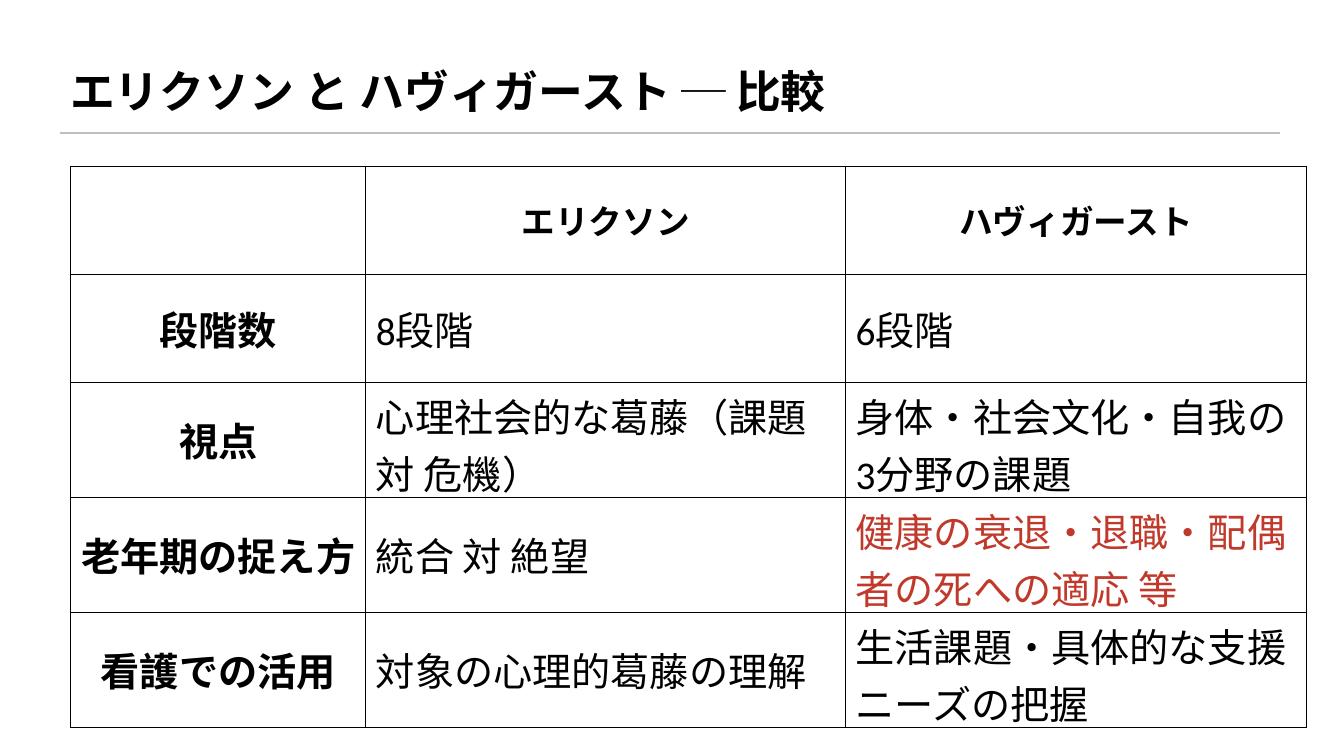
import pptx
import pptx.dml.color
import pptx.enum.shapes
import pptx.enum.text
import pptx.oxml
import pptx.oxml.ns
import pptx.util
from lxml import etree

Cm = pptx.util.Cm
Pt = pptx.util.Pt
RGBColor = pptx.dml.color.RGBColor
ALIGN = pptx.enum.text.PP_ALIGN
MIDDLE = pptx.enum.text.MSO_ANCHOR.MIDDLE
qn = pptx.oxml.ns.qn

BLACK = RGBColor(0x00, 0x00, 0x00)
GREY = RGBColor(0xBF, 0xBF, 0xBF)
RED = RGBColor(0xC0, 0x39, 0x2B)

TITLE = dict(name="Noto Sans CJK JP", size=Pt(32), bold=True)
HEADER = dict(size=Pt(24), bold=True)
LABEL = dict(bold=True)

ROWS = [
    ["", "エリクソン", "ハヴィガースト"],
    ["段階数", "8段階", "6段階"],
    ["視点", "心理社会的な葛藤（課題 対 危機）", "身体・社会文化・自我の3分野の課題"],
    ["老年期の捉え方", "統合 対 絶望", "健康の衰退・退職・配偶者の死への適応 等"],
    ["看護での活用", "対象の心理的葛藤の理解", "生活課題・具体的な支援ニーズの把握"],
]
HIGHLIGHT = (3, 2)
COL_WIDTHS = [7.44, 12.09, 11.61]
ROW_HEIGHTS = [2.72, 2.72, 2.9, 2.9, 2.9]


class SlideBuilder:
    base = dict(name="Calibri", size=Pt(28), bold=False)

    def __init__(self, slide):
        self.s = slide

    def add_text(self, tf, text, fmt, color=BLACK, align=ALIGN.LEFT):
        p = tf.paragraphs[0]
        p.alignment = align
        r = p.add_run()
        r.text = text
        for key, value in {**self.base, **fmt}.items():
            setattr(r.font, key, value)
        r.font.color.rgb = color

    def textbox(self, x, y, w, h, text, fmt):
        tf = self.s.shapes.add_textbox(Cm(x), Cm(y), Cm(w), Cm(h)).text_frame
        tf.word_wrap = True
        tf.vertical_anchor = MIDDLE
        self.add_text(tf, text, fmt)

    def line(self, x1, y1, x2, y2, color, width):
        sp = self.s.shapes.add_connector(
            pptx.enum.shapes.MSO_CONNECTOR.STRAIGHT, Cm(x1), Cm(y1), Cm(x2), Cm(y2))
        sp.line.color.rgb = color
        sp.line.width = Pt(width)
        etree.SubElement(sp._element.spPr, qn("a:effectLst"))

    def borders(self, cell, color, width):
        tcPr = cell._tc.get_or_add_tcPr()
        for i, side in enumerate(("lnL", "lnR", "lnT", "lnB")):
            ln = etree.Element(qn("a:" + side), w=str(Pt(width)))
            fill = etree.SubElement(ln, qn("a:solidFill"))
            etree.SubElement(fill, qn("a:srgbClr"), val=str(color))
            tcPr.insert(i, ln)

    def table(self, x, y, widths, heights, rows):
        tbl = self.s.shapes.add_table(
            len(heights), len(widths), Cm(x), Cm(y),
            Cm(sum(widths)), Cm(sum(heights))).table
        tbl.first_row = tbl.horz_banding = False
        for col, w in zip(tbl.columns, widths):
            col.width = Cm(w)
        for row, h in zip(tbl.rows, heights):
            row.height = Cm(h)
        for i, texts in enumerate(rows):
            for j, text in enumerate(texts):
                cell = tbl.cell(i, j)
                cell.fill.background()
                cell.vertical_anchor = MIDDLE
                self.borders(cell, BLACK, 1)
                if text:
                    fmt = HEADER if i == 0 else LABEL if j == 0 else {}
                    self.add_text(cell.text_frame, text, fmt,
                                  RED if (i, j) == HIGHLIGHT else BLACK,
                                  ALIGN.CENTER if fmt else ALIGN.LEFT)


def main():
    prs = pptx.Presentation()
    prs.slide_width, prs.slide_height = Cm(33.87), Cm(19.05)
    b = SlideBuilder(prs.slides.add_slide(prs.slide_layouts[6]))

    # Title and rule below it
    b.textbox(1.52, 1.14, 30.73, 2.29, "エリクソン と ハヴィガースト ─ 比較", TITLE)
    b.line(1.52, 3.35, 32.26, 3.35, GREY, 1)

    # Comparison table
    b.table(1.78, 4.19, COL_WIDTHS, ROW_HEIGHTS, ROWS)

    prs.save("out.pptx")


if __name__ == "__main__":
    main()
